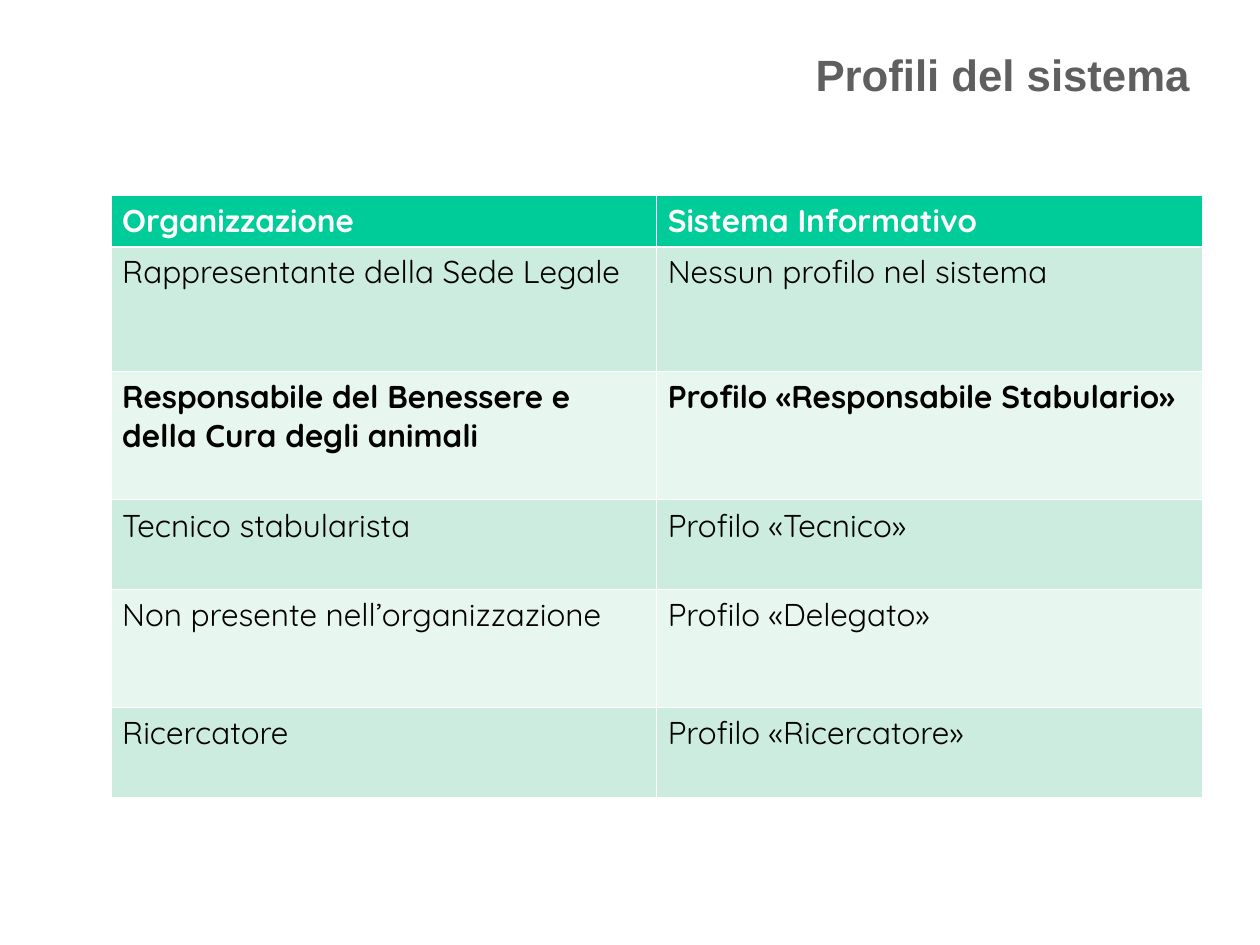
from lxml.etree import SubElement
from pptx import Presentation
from pptx.dml.color import RGBColor
from pptx.enum.text import MSO_ANCHOR as Anchor, PP_ALIGN as Align
from pptx.oxml.ns import qn
from pptx.util import Inches, Pt

TITLE = "Profili del sistema"
# left text, right text, row height, bold
ROWS = [
    ("Organizzazione", "Sistema Informativo", 0.4, True),
    ("Rappresentante della Sede Legale", "Nessun profilo nel sistema", 0.99, False),
    ("Responsabile del Benessere e della Cura degli animali",
     "Profilo «Responsabile Stabulario»", 1.02, True),
    ("Tecnico stabularista", "Profilo «Tecnico»", 0.71, False),
    ("Non presente nell’organizzazione", "Profilo «Delegato»", 0.94, False),
    ("Ricercatore", "Profilo «Ricercatore»", 0.71, False),
]
LEFT, TOP, COL = 0.88, 1.55, 4.33
HEAD, BANDS = "00CC99", ("E7F6EF", "CBECDE")
WHITE, BLACK, GREY = "FFFFFF", "000000", "5F5F5F"
THIN, THICK = 0.45, 1.47


def rgb(code):
    return RGBColor.from_string(code)


def write(frame, text, font="Quicksand", size=18, color=BLACK, bold=False,
          align=Align.LEFT, space=0.98):
    para = frame.paragraphs[0]
    para.alignment = align
    para.line_spacing = space
    run = para.add_run()
    run.text = text
    face = run.font
    face.name, face.size, face.bold = font, Pt(size), bold
    face.color.rgb = rgb(color)


def edge(cell, sides):
    """Draw white borders; sides maps lnL, lnR, lnT, lnB to widths in points."""
    props = cell._tc.get_or_add_tcPr()
    for at, (side, width) in enumerate(sides.items()):
        line = SubElement(props, qn("a:" + side), w=str(Pt(width)))
        fill = SubElement(line, qn("a:solidFill"))
        SubElement(fill, qn("a:srgbClr"), val=WHITE)
        props.insert(at, line)


def add_title(slide):
    title = slide.shapes.title
    title.left, title.top = Inches(0.43), Inches(0)
    title.width, title.height = Inches(9.11), Inches(1.17)
    title.text_frame.vertical_anchor = Anchor.MIDDLE
    write(title.text_frame, TITLE, font="Arial", size=25, color=GREY,
          bold=True, align=Align.RIGHT, space=1.0)


def add_roles(slide):
    high = sum(row[2] for row in ROWS)
    table = slide.shapes.add_table(
        len(ROWS), 2, Inches(LEFT), Inches(TOP), Inches(2 * COL), Inches(high)).table
    for col in table.columns:
        col.width = Inches(COL)
    for r, (left, right, tall, bold) in enumerate(ROWS):
        table.rows[r].height = Inches(tall)
        for c, text in enumerate((left, right)):
            cell = table.cell(r, c)
            cell.margin_left = cell.margin_right = Inches(0.09)
            cell.margin_top = cell.margin_bottom = Inches(0.05)
            cell.fill.solid()
            cell.fill.fore_color.rgb = rgb(BANDS[r % 2] if r else HEAD)
            write(cell.text_frame, text, bold=bold, color=BLACK if r else WHITE)
            edge(cell, {"lnL": THIN, "lnR": THIN,
                        "lnT": THICK if r == 1 else THIN,
                        "lnB": THICK if r == 0 else THIN})


def main():
    deck = Presentation()
    deck.slide_width, deck.slide_height = Inches(10), Inches(7.5)
    slide = deck.slides.add_slide(deck.slide_layouts[5])
    add_title(slide)
    add_roles(slide)
    deck.save("out.pptx")


if __name__ == "__main__":
    main()
